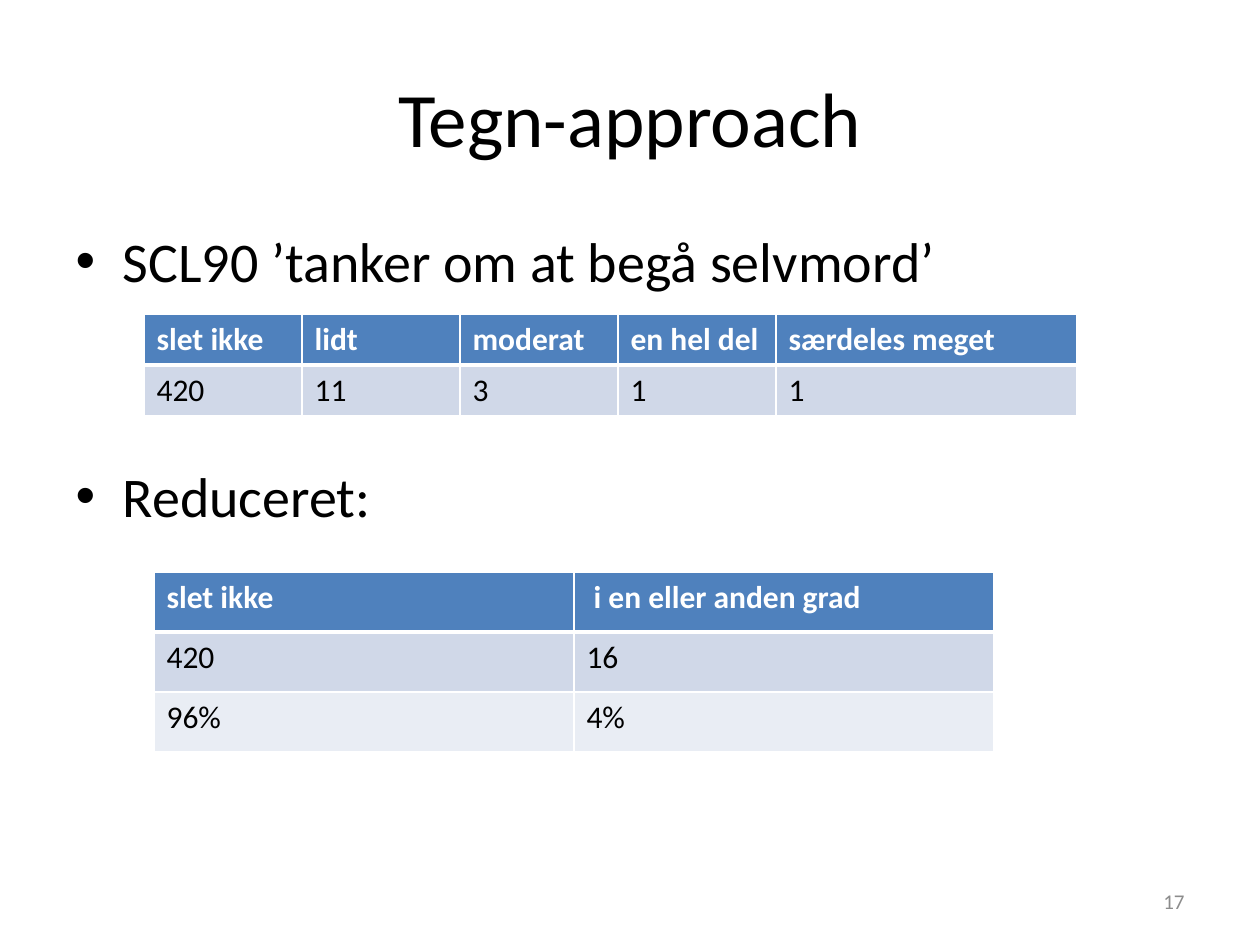
from dataclasses import dataclass

from lxml import etree
from pptx import Presentation
from pptx.dml.color import RGBColor
from pptx.enum.text import MSO_ANCHOR, PP_ALIGN
from pptx.oxml.ns import qn
from pptx.util import Pt

EMU_PER_PX = 914400 / 126
CENTER, RIGHT = PP_ALIGN.CENTER, PP_ALIGN.RIGHT
MIDDLE = MSO_ANCHOR.MIDDLE


@dataclass(frozen=True)
class Theme:
    font: str = "Calibri"
    text: str = "000000"
    muted: str = "8C8C8C"
    white: str = "FFFFFF"
    header: str = "4F81BD"
    bands: tuple = ("D0D8E8", "E9EDF4")
    title_size: int = 44
    body_size: int = 32
    table_size: int = 18
    number_size: int = 12
    thin: int = 1
    thick: int = 3


THEME = Theme()


def px(n):
    return round(n * EMU_PER_PX)


def place(sp, left, top, width, height):
    sp.left, sp.top, sp.width, sp.height = map(px, (left, top, width, height))


def add_run(p, text, size, color, bold=False):
    r = p.add_run()
    r.text = text
    r.font.name = THEME.font
    r.font.size = Pt(size)
    r.font.bold = bold
    r.font.color.rgb = RGBColor.from_string(color)


def fill_title(sp, text):
    place(sp, 63, 38, 1134, 158)
    tf = sp.text_frame
    tf.vertical_anchor = MIDDLE
    p = tf.paragraphs[0]
    p.alignment = CENTER
    add_run(p, text, THEME.title_size, THEME.text)


def fill_body(sp, items, gap):
    """Write the bullets, with gap points between them for a table."""
    place(sp, 63, 220, 1134, 624)
    tf = sp.text_frame
    for i, text in enumerate(items):
        p = tf.add_paragraph() if i else tf.paragraphs[0]
        if i:
            p.space_before = Pt(gap)
        add_run(p, text, THEME.body_size, THEME.text)


def add_border(cell, side, width):
    ln = etree.SubElement(cell._tc.get_or_add_tcPr(), qn(f"a:ln{side}"), w=str(Pt(width)))
    fill = etree.SubElement(ln, qn("a:solidFill"))
    etree.SubElement(fill, qn("a:srgbClr"), val=THEME.white)


def format_cell(cell, text, row):
    is_header = row == 0
    widths = {
        "L": THEME.thin,
        "R": THEME.thin,
        "T": THEME.thick if row == 1 else THEME.thin,
        "B": THEME.thick if is_header else THEME.thin,
    }
    for side, width in widths.items():
        add_border(cell, side, width)
    band = THEME.bands[(row - 1) % len(THEME.bands)]
    cell.fill.solid()
    cell.fill.fore_color.rgb = RGBColor.from_string(THEME.header if is_header else band)
    color = THEME.white if is_header else THEME.text
    add_run(cell.text_frame.paragraphs[0], text, THEME.table_size, color, is_header)


def add_data_table(s, left, top, col_widths, row_height, rows):
    size = (sum(col_widths), row_height * len(rows))
    frame = s.shapes.add_table(len(rows), len(col_widths), *map(px, (left, top, *size)))
    table = frame.table
    for col, width in zip(table.columns, col_widths):
        col.width = px(width)
    for i, values in enumerate(rows):
        table.rows[i].height = px(row_height)
        for j, text in enumerate(values):
            format_cell(table.cell(i, j), text, i)


def add_slide_number(s, text):
    sp = s.shapes.add_textbox(*map(px, (903, 876, 294, 50)))
    tf = sp.text_frame
    tf.word_wrap = True
    tf.vertical_anchor = MIDDLE
    p = tf.paragraphs[0]
    p.alignment = RIGHT
    add_run(p, text, THEME.number_size, THEME.muted)


def main():
    prs = Presentation()
    prs.slide_width, prs.slide_height = px(1260), px(945)
    s = prs.slides.add_slide(prs.slide_layouts[1])
    fill_title(s.shapes.title, "Tegn-approach")
    fill_body(
        s.placeholders[1],
        ["SCL90 ’tanker om at begå selvmord’", "Reduceret:"],
        gap=96,
    )
    add_data_table(s, 144, 314, [158] * 4 + [301], 51, [
        ["slet ikke", "lidt", "moderat", "en hel del", "særdeles meget"],
        ["420", "11", "3", "1", "1"],
    ])
    add_data_table(s, 154, 572, [420] * 2, 60, [
        ["slet ikke", " i en eller anden grad"],
        ["420", "16"],
        ["96%", "4%"],
    ])
    add_slide_number(s, "17")
    prs.save("out.pptx")


if __name__ == "__main__":
    main()
